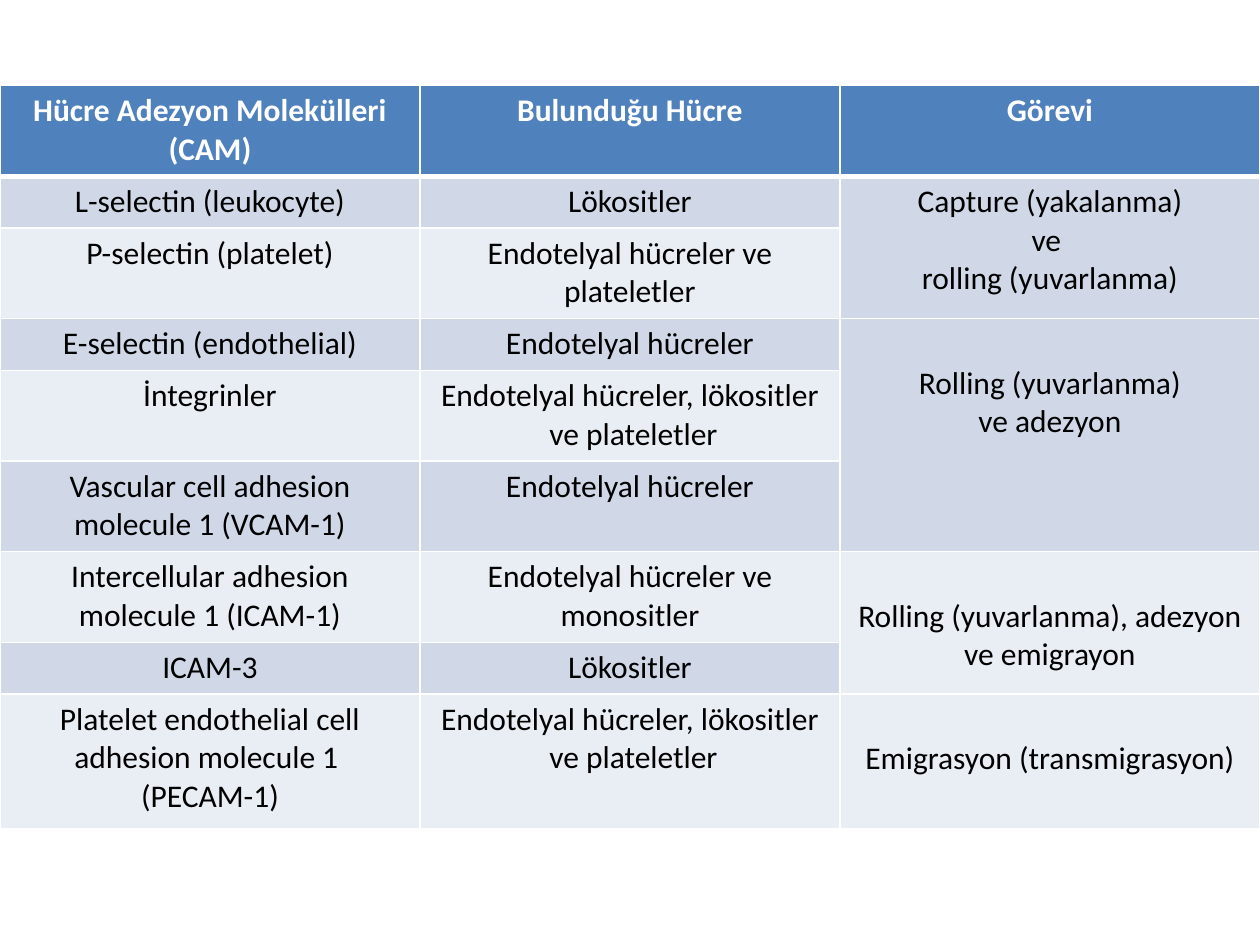
from pptx import Presentation
from pptx.dml.color import RGBColor
from pptx.enum.text import PP_ALIGN
from pptx.oxml import parse_xml
from pptx.oxml.ns import nsdecls
from pptx.util import Inches, Pt

HEADER = ("Hücre Adezyon Molekülleri (CAM)", "Bulunduğu Hücre", "Görevi")
MOLECULES = [
    ("L-selectin (leukocyte)", "Lökositler"),
    ("P-selectin (platelet)", "Endotelyal hücreler ve plateletler"),
    ("E-selectin (endothelial)", "Endotelyal hücreler"),
    ("İntegrinler", "Endotelyal hücreler, lökositler\n ve plateletler"),
    ("Vascular cell adhesion molecule 1 (VCAM-1)", "Endotelyal hücreler"),
    ("Intercellular adhesion molecule 1 (ICAM-1)", "Endotelyal hücreler ve monositler"),
    ("ICAM-3", "Lökositler"),
    ("Platelet endothelial cell adhesion molecule 1 \n(PECAM-1)",
     "Endotelyal hücreler, lökositler\n ve plateletler"),
]
# text, rows covered, lines left free above the text
ROLES = [
    ("Capture (yakalanma)\nve \nrolling (yuvarlanma)", 2, 0),
    ("Rolling (yuvarlanma)\nve adezyon", 3, 1),
    ("Rolling (yuvarlanma), adezyon\nve emigrayon", 2, 1),
    ("Emigrasyon (transmigrasyon)", 1, 1),
]
COLORS = {"header": "4F81BD", "odd": "D0D8E8", "even": "E9EDF4",
          "border": "FFFFFF", "header_text": "FFFFFF", "text": "000000"}
ROW_LINES = (2, 1, 2, 1, 2, 2, 2, 1, 3)
LINE, MARGIN, LAST_EXTRA = 0.31, 0.05, 0.04
TOP = 0.68


def set_borders(cell, header):
    properties = cell._tc.get_or_add_tcPr()
    for side in "LRTB":
        width = Pt(3 if header and side == "B" else 1)
        properties.append(parse_xml(
            f'<a:ln{side} {nsdecls("a")} w="{width}"><a:solidFill>'
            f'<a:srgbClr val="{COLORS["border"]}"/></a:solidFill></a:ln{side}>'))


def style_cell(cell, row):
    header = row == 0
    set_borders(cell, header)
    fill = "header" if header else ("even", "odd")[row % 2]
    cell.fill.solid()
    cell.fill.fore_color.rgb = RGBColor.from_string(COLORS[fill])


def write_cell(cell, text, header=False, free_lines=0):
    cell.text_frame.text = text
    cell.margin_top = Inches(MARGIN + free_lines * LINE)
    for para in cell.text_frame.paragraphs:
        para.alignment = PP_ALIGN.CENTER
        for span in para.runs:
            span.font.name = "Calibri"
            span.font.size = Pt(18)
            span.font.bold = header
            color = COLORS["header_text" if header else "text"]
            span.font.color.rgb = RGBColor.from_string(color)


deck = Presentation()
deck.slide_width, deck.slide_height = Inches(10), Inches(7.5)
page = deck.slides.add_slide(deck.slide_layouts[6])

heights = [lines * LINE + 2 * MARGIN for lines in ROW_LINES]
heights[-1] += LAST_EXTRA
table = page.shapes.add_table(
    len(heights), len(HEADER), 0, Inches(TOP), deck.slide_width, Inches(sum(heights))).table

for row, height in enumerate(heights):
    table.rows[row].height = Inches(height)
    for column in range(len(HEADER)):
        style_cell(table.cell(row, column), row)

for row, texts in enumerate([HEADER, *MOLECULES]):
    for column, text in enumerate(texts):
        write_cell(table.cell(row, column), text, header=row == 0)

row, last = 1, len(HEADER) - 1
for text, covered, free_lines in ROLES:
    cell = table.cell(row, last)
    if covered > 1:
        cell.merge(table.cell(row + covered - 1, last))
    write_cell(cell, text, free_lines=free_lines)
    row += covered

deck.save("out.pptx")
